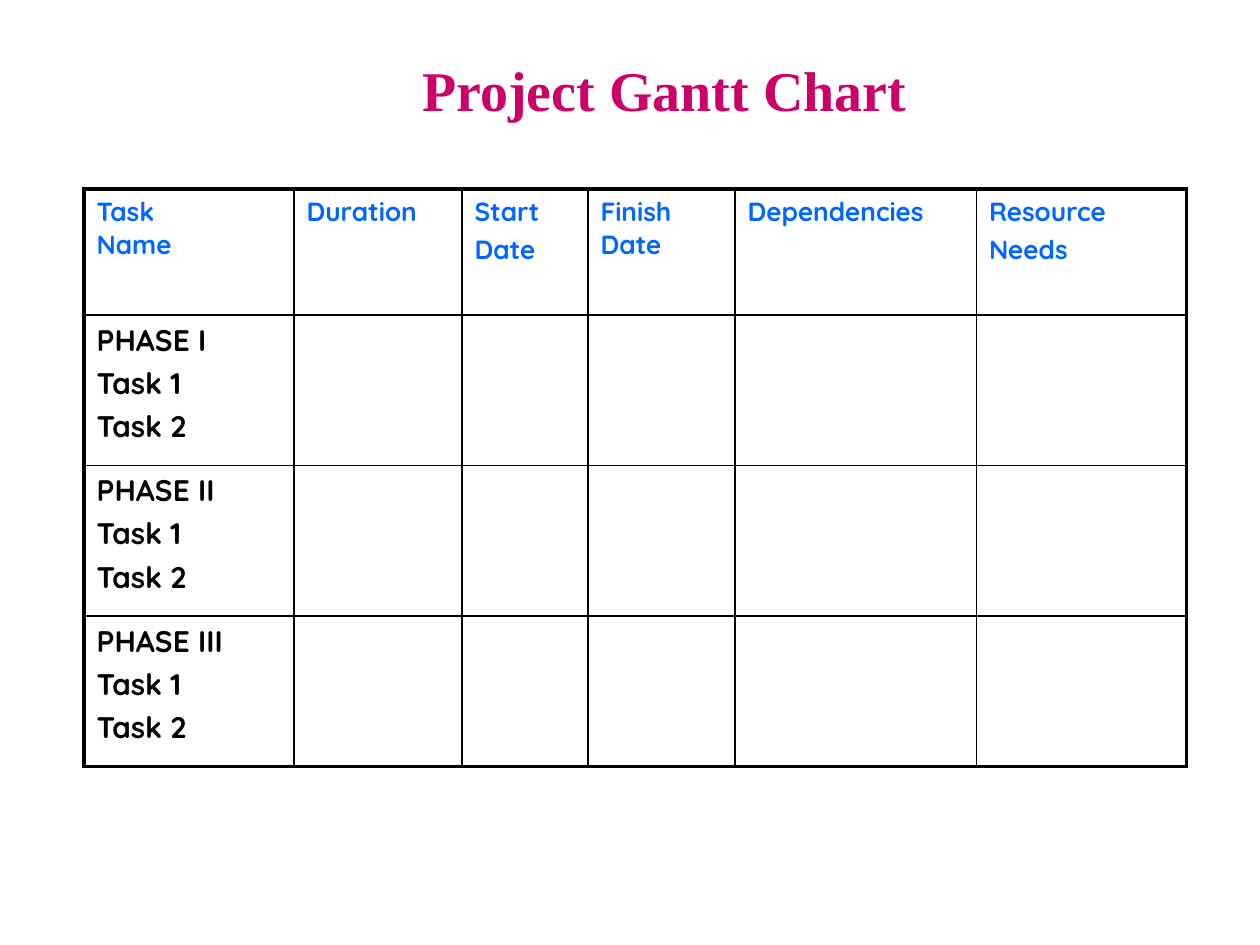
from lxml.etree import SubElement
from pptx import Presentation
from pptx.dml.color import RGBColor
from pptx.enum.text import MSO_ANCHOR, MSO_AUTO_SIZE, PP_ALIGN
from pptx.oxml.ns import qn
from pptx.util import Pt

# Content
TITLE = "Project Gantt Chart"
# One (paragraphs, width) pair per column; \v is a line break
COLUMNS = [
    (["Task\vName"], 120),
    (["Duration"], 96),
    (["Start", "Date"], 72),
    (["Finish Date"], 84),
    (["Dependencies"], 138),
    (["Resource", "Needs"], 120),
]
PHASES = ["PHASE I", "PHASE II", "PHASE III"]
TASKS = ["Task 1", "Task 2"]

# Style
PINK = RGBColor(0xCC, 0x00, 0x66)
BLUE = RGBColor(0x00, 0x66, 0xFF)
BLACK = RGBColor(0x00, 0x00, 0x00)
TITLE_FONT = "Times New Roman"
TABLE_FONT = "Quicksand"
HEADER_SIZE, PHASE_SIZE = 15, 17
OUTER_LINE, INNER_LINE = 2.25, 1
TABLE_LEFT, TABLE_TOP = 48, 108
HEADER_HEIGHT, PHASE_HEIGHT = 72, 86


def format_font(font, name, size, color):
    font.name = name
    font.size = Pt(size)
    font.bold = True
    font.color.rgb = color


def write_cell(cell, lines, size, color):
    cell.text = "\n".join(lines)
    for paragraph in cell.text_frame.paragraphs:
        paragraph.space_before = Pt(size * 0.2)
        format_font(paragraph.font, TABLE_FONT, size, color)


def add_border(cell, side, width):
    properties = cell._tc.get_or_add_tcPr()
    line = SubElement(properties, qn(f"a:ln{side}"), w=str(Pt(width)))
    fill = SubElement(line, qn("a:solidFill"))
    SubElement(fill, qn("a:srgbClr"), val=str(BLACK))


presentation = Presentation()
presentation.slide_width, presentation.slide_height = Pt(720), Pt(540)
slide = presentation.slides.add_slide(presentation.slide_layouts[5])

# Title
title = slide.shapes.title
title.left, title.top, title.width, title.height = Pt(234), Pt(28), Pt(292), Pt(45)
title_frame = title.text_frame
title_frame.text = TITLE
title_frame.word_wrap = False
title_frame.auto_size = MSO_AUTO_SIZE.SHAPE_TO_FIT_TEXT
title_frame.vertical_anchor = MSO_ANCHOR.TOP
title_paragraph = title_frame.paragraphs[0]
title_paragraph.alignment = PP_ALIGN.LEFT
format_font(title_paragraph.font, TITLE_FONT, 32, PINK)

# Table grid
row_heights = [HEADER_HEIGHT] + [PHASE_HEIGHT] * len(PHASES)
column_widths = [width for _, width in COLUMNS]
table = slide.shapes.add_table(
    len(row_heights), len(column_widths), Pt(TABLE_LEFT), Pt(TABLE_TOP),
    Pt(sum(column_widths)), Pt(sum(row_heights))).table
table.first_row = table.horz_banding = False
for column, width in zip(table.columns, column_widths):
    column.width = Pt(width)
for row, height in zip(table.rows, row_heights):
    row.height = Pt(height)

# Table text
for column_index, (lines, _) in enumerate(COLUMNS):
    write_cell(table.cell(0, column_index), lines, HEADER_SIZE, BLUE)
for row_index, phase in enumerate(PHASES, start=1):
    write_cell(table.cell(row_index, 0), [phase] + TASKS, PHASE_SIZE, BLACK)

# Heavy lines around the table, thin lines inside
last_row, last_column = len(row_heights) - 1, len(column_widths) - 1
for row_index, row in enumerate(table.rows):
    for column_index, cell in enumerate(row.cells):
        outer_sides = {
            "L": column_index == 0,
            "R": column_index == last_column,
            "T": row_index == 0,
            "B": row_index == last_row,
        }
        for side, is_outer in outer_sides.items():
            add_border(cell, side, OUTER_LINE if is_outer else INNER_LINE)
        cell.fill.background()

presentation.save("out.pptx")
